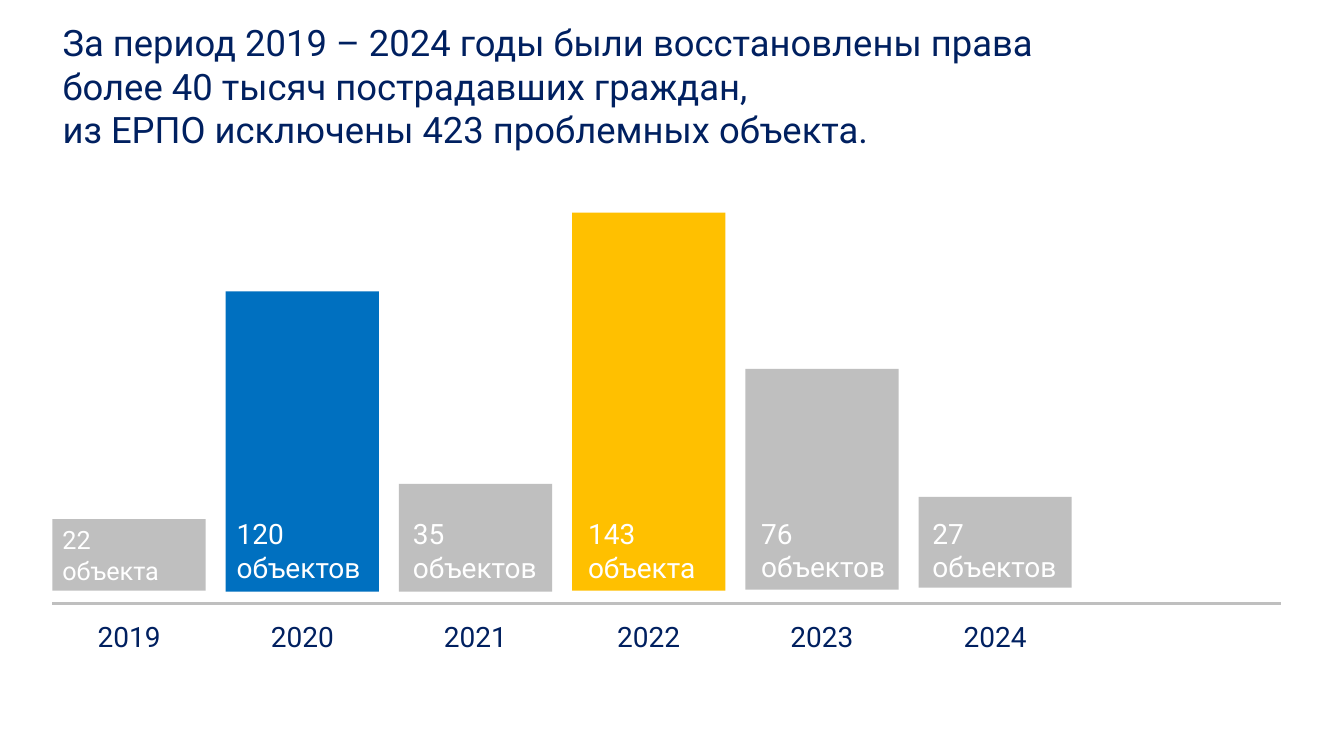
from dataclasses import dataclass

from lxml import etree
from pptx import Presentation
from pptx.dml.color import RGBColor
from pptx.enum.shapes import MSO_CONNECTOR, MSO_SHAPE
from pptx.enum.text import MSO_ANCHOR, MSO_AUTO_SIZE, PP_ALIGN
from pptx.oxml.ns import qn
from pptx.util import Inches, Pt


@dataclass(frozen=True)
class Theme:
    font: str = "Roboto"
    navy: str = "002060"
    white: str = "FFFFFF"
    grey: str = "BFBFBF"
    blue: str = "0070C0"
    amber: str = "FFC000"
    title_size: int = 26
    label_size: int = 20
    small_size: int = 18
    axis_width: float = 2.25


@dataclass(frozen=True)
class Bar:
    year: str
    label: str
    top: float
    height: float
    color: str
    label_dx: float = 0
    label_top: float = 5.08
    label_width: float = 1.76
    inside: bool = False  # the label is the bar's own text


THEME = Theme()

# Column grid, in inches
LEFT, PITCH, BAR_WIDTH = 0.52, 1.718, 1.52
AXIS_Y, AXIS_RIGHT = 5.99, 12.71
YEAR_TOP, YEAR_HEIGHT, LABEL_HEIGHT = 6.1, 0.44, 0.77

TITLE = ("За период 2019 – 2024 годы были восстановлены права\n"
         "более 40 тысяч пострадавших граждан,\n"
         "из ЕРПО исключены 423 проблемных объекта.")

BARS = [
    Bar("2019", "22\nобъекта", 5.15, 0.71, THEME.grey, inside=True),
    Bar("2020", "120 объектов", 2.89, 2.98, THEME.blue, 0.01, label_width=1.62),
    Bar("2021", "35\nобъектов", 4.8, 1.07, THEME.grey, 0.04),
    Bar("2022", "143\nобъекта", 2.11, 3.75, THEME.amber, 0.06),
    Bar("2023", "76\nобъектов", 3.66, 2.19, THEME.grey, 0.06, 5.07),
    Bar("2024", "27\nобъектов", 4.93, 0.9, THEME.grey, 0.04, 5.07),
]


def rgb(color):
    return RGBColor.from_string(color)


def box(left, top, width, height):
    return [Inches(v) for v in (left, top, width, height)]


def write(tf, text, *, size=THEME.label_size, color=THEME.white,
          align=PP_ALIGN.LEFT, anchor=MSO_ANCHOR.TOP):
    """Fill a text frame, one paragraph per line of text."""
    tf.word_wrap = True
    tf.auto_size = MSO_AUTO_SIZE.SHAPE_TO_FIT_TEXT
    tf.vertical_anchor = anchor
    tf.text = text
    for p in tf.paragraphs:
        p.alignment = align
        for r in p.runs:
            r.font.name = THEME.font
            r.font.size = Pt(size)
            r.font.color.rgb = rgb(color)


def add_title(s, text):
    sp = s.shapes.title
    sp.left, sp.top, sp.width, sp.height = box(LEFT, 0.15, 12.55, 1.41)
    write(sp.text_frame, text, size=THEME.title_size, color=THEME.navy)


def add_text(s, text, bounds, **fmt):
    write(s.shapes.add_textbox(*bounds).text_frame, text, **fmt)


def add_axis(s):
    line = s.shapes.add_connector(MSO_CONNECTOR.STRAIGHT, Inches(LEFT),
                                  Inches(AXIS_Y), Inches(AXIS_RIGHT), Inches(AXIS_Y))
    line.line.color.rgb = rgb(THEME.grey)
    line.line.width = Pt(THEME.axis_width)
    etree.SubElement(line._element.spPr, qn("a:effectLst"))


def add_bar(s, bar, left):
    sp = s.shapes.add_shape(MSO_SHAPE.RECTANGLE,
                            *box(left, bar.top, BAR_WIDTH, bar.height))
    sp.shadow.inherit = False
    sp.fill.solid()
    sp.fill.fore_color.rgb = rgb(bar.color)
    sp.line.fill.background()
    if bar.inside:
        write(sp.text_frame, bar.label, size=THEME.small_size,
              anchor=MSO_ANCHOR.MIDDLE)
    else:
        add_text(s, bar.label, box(left + bar.label_dx, bar.label_top,
                                   bar.label_width, LABEL_HEIGHT))


def add_year(s, year, left):
    add_text(s, year, box(left, YEAR_TOP, BAR_WIDTH, YEAR_HEIGHT),
             color=THEME.navy, align=PP_ALIGN.CENTER)


def main():
    prs = Presentation()
    prs.slide_width, prs.slide_height = Inches(13.33), Inches(7.5)
    s = prs.slides.add_slide(prs.slide_layouts[5])

    # Heading and base line
    add_title(s, TITLE)
    add_axis(s)

    # One column per year
    for i, bar in enumerate(BARS):
        left = LEFT + i * PITCH
        add_bar(s, bar, left)
        add_year(s, bar.year, left)

    prs.save("out.pptx")


if __name__ == "__main__":
    main()
